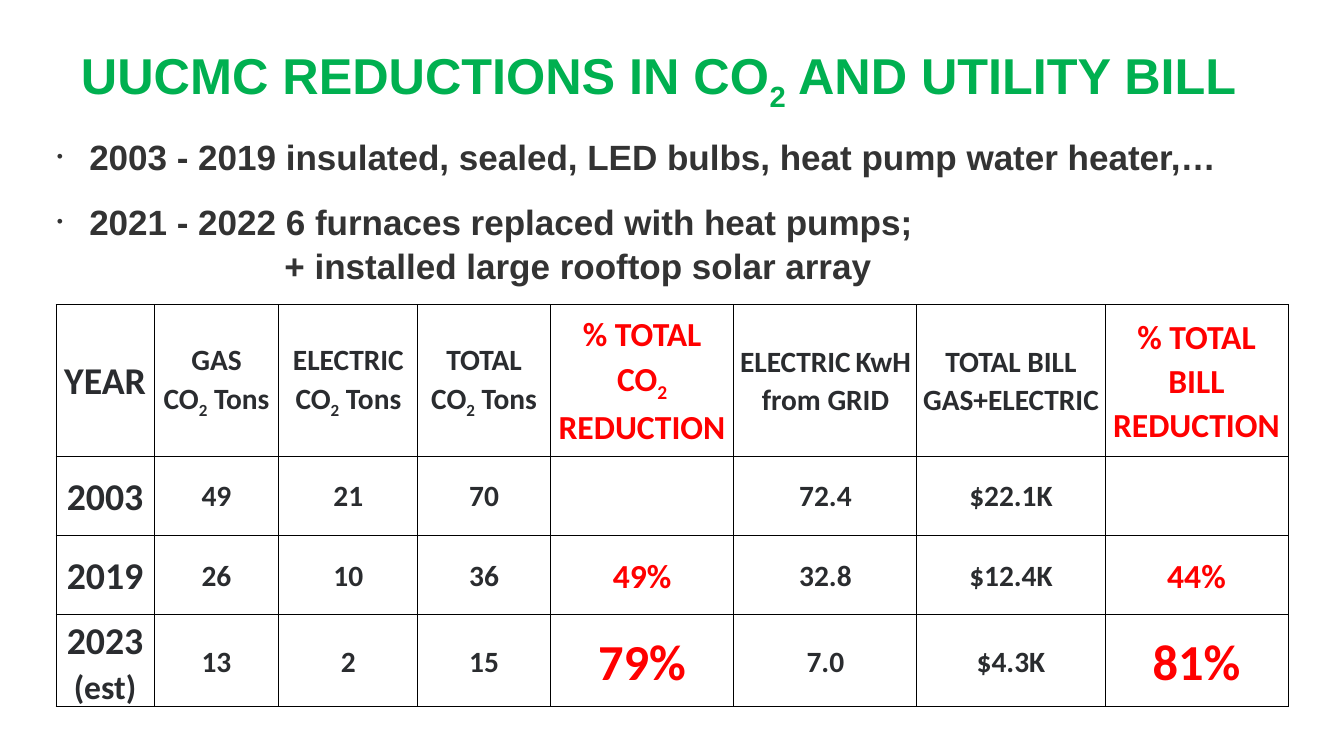
from pptx import Presentation
from pptx.dml.color import RGBColor as Rgb
from pptx.enum.text import MSO_ANCHOR as Anchor, PP_ALIGN as Align
from pptx.oxml import parse_xml
from pptx.oxml.ns import nsdecls
from pptx.util import Cm, Pt

HUES = {"title": "00B050", "body": "333333", "cell": "2A2C2F",
        "gain": "FF0000", "line": "000000", "back": "FFFFFF"}

# Table text: "_" marks a subscript, "\n" a new paragraph,
# and a list holds runs of (text, size)
HEAD = ["YEAR", "GAS\nCO_2_ Tons", "ELECTRIC CO_2_ Tons", "TOTAL CO_2_ Tons",
        "% TOTAL CO_2_ REDUCTION",
        [("ELECTRIC", 28), (" ", 20), ("KwH from GRID", 28)],
        "TOTAL BILL GAS+ELECTRIC", "% TOTAL BILL REDUCTION"]
ROWS = [HEAD,
        ["2003", "49", "21", "70", "", "72.4", "$22.1K", ""],
        ["2019", "26", "10", "36", "49%", "32.8", "$12.4K", "44%"],
        [[("2023 ", 36), ("(est)", 32)], "13", "2", "15", "79%", "7.0",
         "$4.3K", "81%"]]
WIDE = [3.3, 4.19, 4.67, 4.45, 6.17, 6.15, 6.32, 6.15]
HIGH = [5.08, 2.67, 2.67, 3.02]
GAIN = (4, 7)  # columns of reductions


def write(para, text, size=28, hue="cell", font="Calibri", align=None,
          gap=None, lead=None):
    """Add bold runs to a paragraph; parts between underscores are lowered."""
    para.alignment = align
    if gap is not None:
        para.space_before = Pt(gap)
    if lead:
        para.line_spacing = lead
    for i, part in enumerate(text.split("_")):
        if not part:
            continue
        run = para.add_run()
        run.text = part
        face = run.font
        face.name, face.size, face.bold = font, Pt(size), True
        face.color.rgb = Rgb.from_string(HUES[hue])
        if i % 2:
            face._element.set("baseline", "-25000")


def clear(frame):
    frame.margin_left = frame.margin_right = 0
    frame.margin_top = frame.margin_bottom = 0
    frame.word_wrap = True


def indent(para, left, hang=0):
    """Indent a paragraph; a hanging one gets a small bullet."""
    props = para._p.get_or_add_pPr()
    props.set("marL", str(Cm(left)))
    props.set("indent", str(-Cm(hang)))
    marks = (['<a:buSzPct %s val="50000"/>', '<a:buFont %s typeface="Arial"/>',
              '<a:buChar %s char="•"/>'] if hang else ["<a:buNone %s/>"])
    for mark in marks:
        props.append(parse_xml(mark % nsdecls("a")))


def add_title(slide, x, y, w, h):
    head = slide.shapes.title
    head.left, head.top, head.width, head.height = Cm(x), Cm(y), Cm(w), Cm(h)
    frame = head.text_frame
    clear(frame)
    frame.vertical_anchor = Anchor.MIDDLE
    write(frame.paragraphs[0], "UUCMC REDUCTIONS IN CO_2_ AND UTILITY BILL",
          size=48, hue="title", font="Arial", align=Align.LEFT, lead=0.9)


def add_list(slide, x, y, w, h):
    frame = slide.shapes.add_textbox(Cm(x), Cm(y), Cm(w), Cm(h)).text_frame
    clear(frame)
    lines = [("2003 - 2019 insulated, sealed, LED bulbs, "
              "heat pump water heater,…", 1.12, 1.09, 0),
             ("2021 - 2022 6 furnaces replaced with heat pumps;",
              1.12, 1.09, 20),
             ("+ installed large rooftop solar array", 7.68, 0, 0)]
    for i, (text, left, hang, gap) in enumerate(lines):
        para = frame.add_paragraph() if i else frame.paragraphs[0]
        indent(para, left, hang)
        write(para, text, size=33.4, hue="body", font="Arial", gap=gap,
              lead=1.05)


def edge(cell):
    """Draw a thin line on all four sides of a cell."""
    props = cell._tc.get_or_add_tcPr()
    for i, side in enumerate("LRTB"):
        props.insert(i, parse_xml(
            f'<a:ln{side} {nsdecls("a")} w="{Pt(1)}"><a:solidFill>'
            f'<a:srgbClr val="{HUES["line"]}"/></a:solidFill></a:ln{side}>'))


def size_of(row, col):
    if col == 0:
        return 36
    if col in GAIN:
        return 48 if row == len(ROWS) - 1 else 32
    return 28


def fill_cell(cell, item, size, hue):
    cell.fill.solid()
    cell.fill.fore_color.rgb = Rgb.from_string(HUES["back"])
    edge(cell)
    cell.vertical_anchor = Anchor.MIDDLE
    cell.margin_left = cell.margin_right = Cm(0.18)
    cell.margin_top = cell.margin_bottom = 0
    frame = cell.text_frame
    paras = ([item] if isinstance(item, list)
             else [[(text, size)] for text in item.split("\n")])
    for i, runs in enumerate(paras):
        para = frame.add_paragraph() if i else frame.paragraphs[0]
        for text, pts in runs:
            write(para, text, size=pts, hue=hue, align=Align.CENTER,
                  lead=1.07)


def add_grid(slide, x, y):
    grid = slide.shapes.add_table(len(ROWS), len(WIDE), Cm(x), Cm(y),
                                  Cm(sum(WIDE)), Cm(sum(HIGH))).table
    grid.first_row = grid.horz_banding = False
    for col, w in zip(grid.columns, WIDE):
        col.width = Cm(w)
    for row, h in zip(grid.rows, HIGH):
        row.height = Cm(h)
    for r, row in enumerate(ROWS):
        for c, item in enumerate(row):
            fill_cell(grid.cell(r, c), item, size_of(r, c),
                      "gain" if c in GAIN else "cell")


def main():
    deck = Presentation()
    deck.slide_width, deck.slide_height = Cm(45.16), Cm(25.4)
    slide = deck.slides.add_slide(deck.slide_layouts[5])
    add_title(slide, 2.72, 1.27, 39.73, 2.57)
    add_list(slide, 1.88, 4.47, 41.4, 5.5)
    add_grid(slide, 1.88, 10.24)
    deck.save("out.pptx")


if __name__ == "__main__":
    main()
